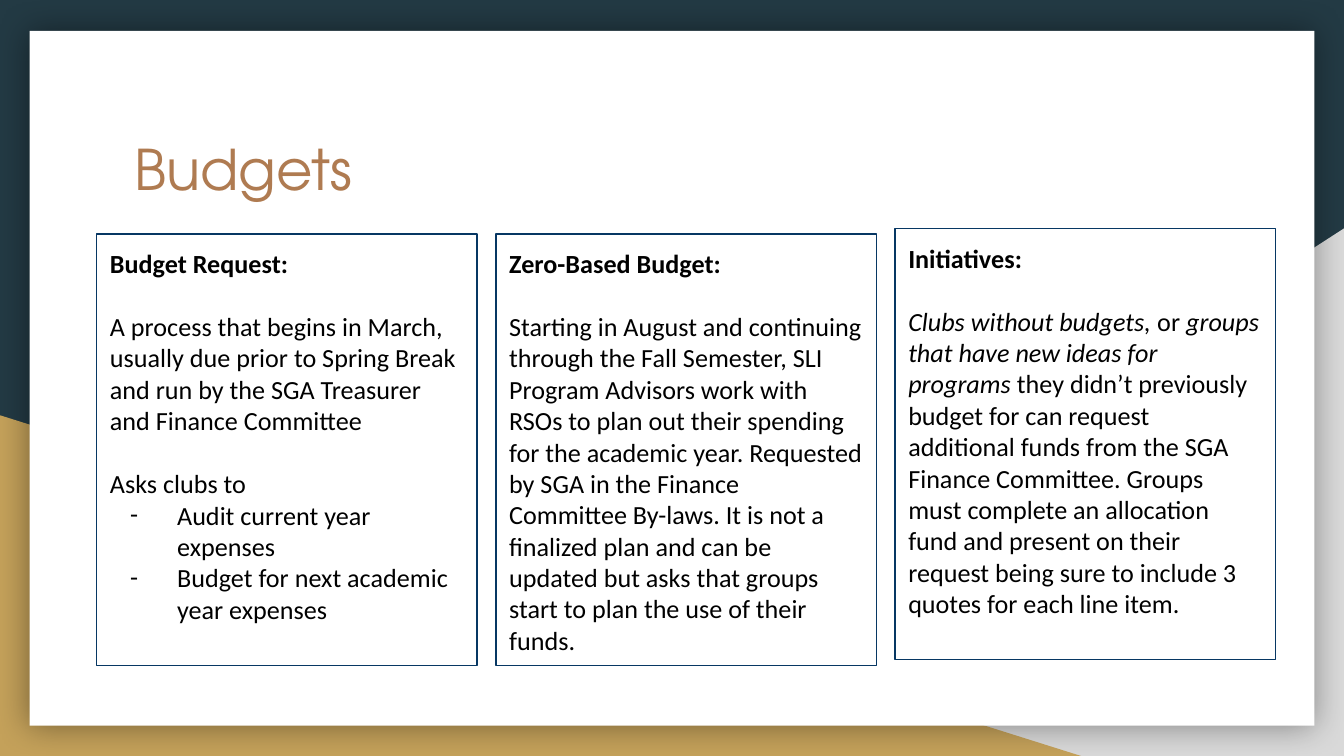
from dataclasses import dataclass

from lxml.etree import SubElement
from pptx import Presentation
from pptx.dml.color import RGBColor
from pptx.enum.shapes import MSO_SHAPE
from pptx.enum.text import MSO_ANCHOR, PP_ALIGN
from pptx.oxml.ns import qn
from pptx.util import Inches, Pt

CARD_LEFT, CARD_STEP = 0.72, 2.97
CARD_WIDTH, CARD_HEIGHT = 2.83, 3.21
BLANK_LINE = 17


@dataclass
class Span:
    text: str
    italic: bool = False


@dataclass
class Para:
    spans: list[Span]
    gap_after: float = 0
    dashed: bool = False


@dataclass
class Card:
    top: float
    heading: str
    paras: list[Para]


@dataclass
class Backdrop:
    kind: MSO_SHAPE
    box: tuple[float, float, float, float]
    color: str
    flipped: bool = False
    shaded: bool = False


BACKDROPS = [
    Backdrop(MSO_SHAPE.RIGHT_TRIANGLE, (3.92, 1.7, 6.08, 3.93), "D9D9D9", flipped=True),
    Backdrop(MSO_SHAPE.RIGHT_TRIANGLE, (0, 3.09, 8.06, 2.54), "C4A15A"),
    Backdrop(MSO_SHAPE.RECTANGLE, (0.22, 0.23, 9.56, 5.17), "FFFFFF", shaded=True),
]

CARDS = [
    Card(1.74, "Budget Request:", [
        Para([Span("A process that begins in March, usually due prior to Spring Break "
                   "and run by the SGA Treasurer and Finance Committee")], BLANK_LINE),
        Para([Span("Asks clubs to")]),
        Para([Span("Audit current year expenses")], dashed=True),
        Para([Span("Budget for next academic year expenses")], dashed=True),
    ]),
    Card(1.74, "Zero-Based Budget:", [
        Para([Span("Starting in August and continuing through the Fall Semester, SLI "
                   "Program Advisors work with RSOs to plan out their spending for the "
                   "academic year. Requested by SGA in the Finance Committee By-laws. "
                   "It is not a finalized plan and can be updated but asks that groups "
                   "start to plan the use of their funds.")]),
    ]),
    Card(1.7, "Initiatives:", [
        Para([
            Span("Clubs without budgets,", italic=True),
            Span(" or "),
            Span("groups that have new ideas for programs", italic=True),
            Span(" they didn’t previously budget for can request additional funds from "
                 "the SGA Finance Committee. Groups must complete an allocation fund and "
                 "present on their request being sure to include 3 quotes for each line "
                 "item."),
        ]),
    ]),
]


def rgb(color: str) -> RGBColor:
    return RGBColor.from_string(color)


def add_span(para, text: str, *, size: float = 14, font: str = "Calibri",
             color: str = "000000", bold: bool = False, italic: bool = False) -> None:
    span = para.add_run()
    span.text = text
    span.font.size = Pt(size)
    span.font.name = font
    span.font.color.rgb = rgb(color)
    span.font.bold = bold
    span.font.italic = italic


def set_frame(frame, anchor: MSO_ANCHOR) -> None:
    frame.word_wrap = True
    frame.vertical_anchor = anchor
    frame.margin_left = frame.margin_right = Inches(0.1)
    frame.margin_top = frame.margin_bottom = Inches(0.1)


def add_dash(para) -> None:
    """Give the paragraph a hanging indent and a dash bullet."""
    properties = para._p.get_or_add_pPr()
    properties.set("marL", str(Inches(0.5)))
    properties.set("indent", str(Inches(-0.35)))
    bullet_color = SubElement(properties, qn("a:buClr"))
    SubElement(bullet_color, qn("a:srgbClr"), val="000000")
    SubElement(properties, qn("a:buFont"), typeface="Calibri")
    SubElement(properties, qn("a:buChar"), char="-")


def add_soft_shadow(shape) -> None:
    effects = shape._element.spPr.find(qn("a:effectLst"))
    shadow = SubElement(effects, qn("a:outerShdw"), blurRad=str(Pt(18)), dist="0",
                        dir="0", algn="ctr", rotWithShape="0")
    color = SubElement(shadow, qn("a:srgbClr"), val="000000")
    SubElement(color, qn("a:alpha"), val="40000")


def add_backdrop(page, backdrop: Backdrop) -> None:
    shape = page.shapes.add_shape(backdrop.kind, *map(Inches, backdrop.box))
    shape.fill.solid()
    shape.fill.fore_color.rgb = rgb(backdrop.color)
    shape.line.fill.background()
    shape.shadow.inherit = False
    if backdrop.flipped:
        shape._element.spPr.find(qn("a:xfrm")).set("flipH", "1")
    if backdrop.shaded:
        add_soft_shadow(shape)


def add_title(page, text: str) -> None:
    title = page.shapes.title
    title.left, title.top = Inches(0.9), Inches(0.92)
    title.width, title.height = Inches(8.21), Inches(0.68)
    set_frame(title.text_frame, MSO_ANCHOR.BOTTOM)
    para = title.text_frame.paragraphs[0]
    para.alignment = PP_ALIGN.LEFT
    add_span(para, text, size=30, font="TeX Gyre Adventor", color="AF7B51")
    # Bring the title in front of the backdrop
    title._element.getparent().append(title._element)


def add_card(page, card: Card, left: float) -> None:
    box = page.shapes.add_shape(MSO_SHAPE.RECTANGLE, Inches(left), Inches(card.top),
                                Inches(CARD_WIDTH), Inches(CARD_HEIGHT))
    box.fill.background()
    box.line.color.rgb = rgb("073763")
    box.line.width = Pt(0.75)
    box.shadow.inherit = False
    frame = box.text_frame
    set_frame(frame, MSO_ANCHOR.TOP)
    heading = frame.paragraphs[0]
    heading.alignment = PP_ALIGN.LEFT
    heading.space_after = Pt(BLANK_LINE)
    add_span(heading, card.heading, bold=True)
    for content in card.paras:
        para = frame.add_paragraph()
        para.alignment = PP_ALIGN.LEFT
        para.space_after = Pt(content.gap_after)
        if content.dashed:
            add_dash(para)
        for span in content.spans:
            add_span(para, span.text, italic=span.italic)


def main() -> None:
    deck = Presentation()
    deck.slide_width = Inches(10)
    deck.slide_height = deck.slide_width * 9 // 16
    page = deck.slides.add_slide(deck.slide_layouts.get_by_name("Title Only"))
    page.background.fill.solid()
    page.background.fill.fore_color.rgb = rgb("233A44")
    for backdrop in BACKDROPS:
        add_backdrop(page, backdrop)
    add_title(page, "Budgets")
    for column, card in enumerate(CARDS):
        add_card(page, card, CARD_LEFT + column * CARD_STEP)
    deck.save("out.pptx")


if __name__ == "__main__":
    main()
